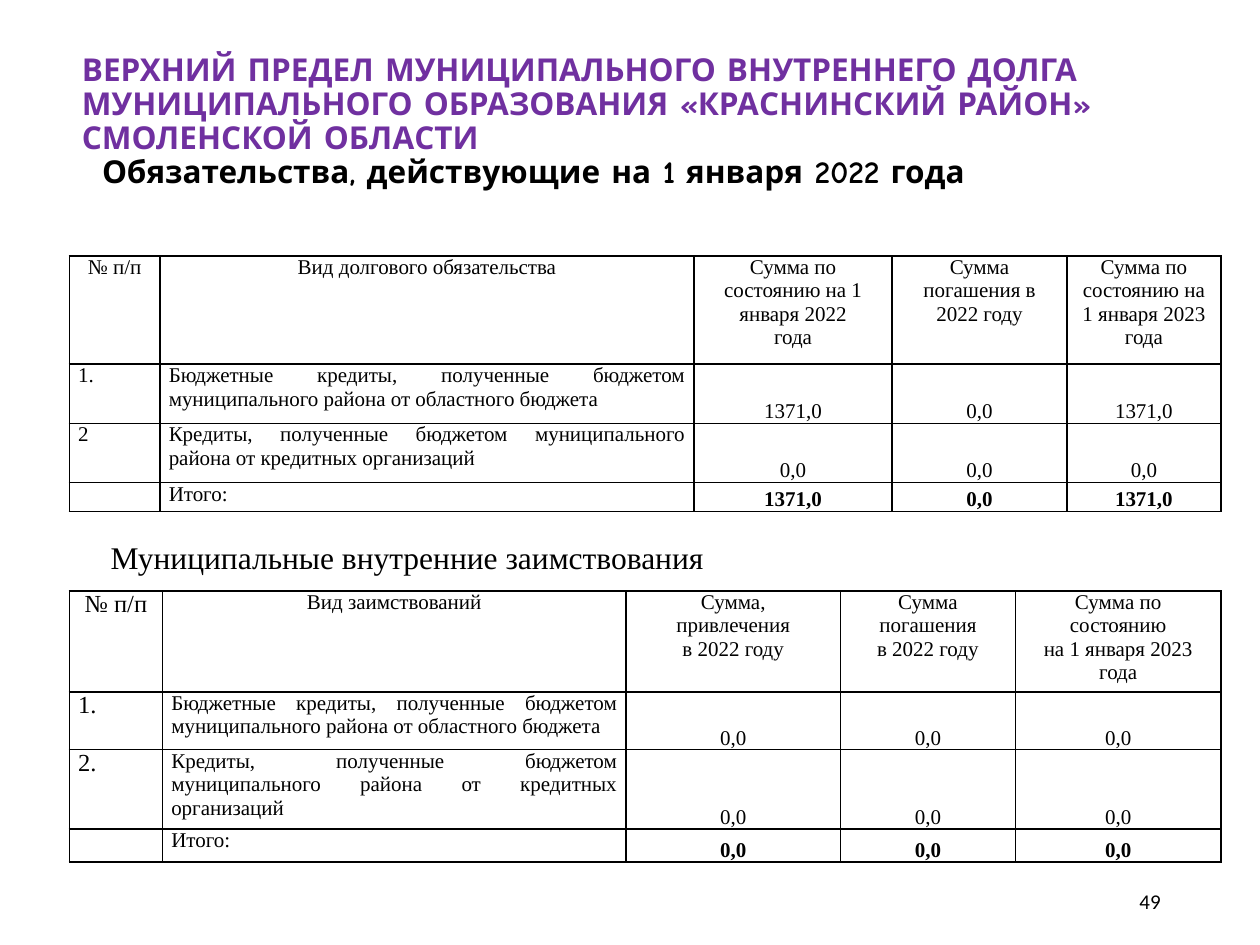
"""Build the slide on municipal debt limits and borrowings."""
from lxml import etree
from pptx import Presentation
from pptx import util as u
from pptx.dml.color import RGBColor
from pptx.enum import text
from pptx.oxml import ns

THEME = {
    "purple": RGBColor.from_string("7030A0"),
    "black": RGBColor.from_string("000000"),
    "line": "000000",
    "display": "Comic Neue",
    "serif": "Times New Roman",
    "sans": "Calibri",
    "heading": 18,
    "number": 14,
    "body": 12,
}

HEADING = ("ВЕРХНИЙ ПРЕДЕЛ МУНИЦИПАЛЬНОГО ВНУТРЕННЕГО ДОЛГА МУНИЦИПАЛЬНОГО "
           "ОБРАЗОВАНИЯ «КРАСНИНСКИЙ РАЙОН» СМОЛЕНСКОЙ ОБЛАСТИ")
SUBHEADING = "Обязательства, действующие на 1 января 2022 года"
BORROWINGS = "Муниципальные внутренние заимствования"
PAGE_NUMBER = "49"
BUDGET_LOANS = ("Бюджетные кредиты, полученные бюджетом муниципального района "
                "от областного бюджета")
BANK_LOANS = ("Кредиты, полученные бюджетом муниципального района "
              "от кредитных организаций")

TABLES = [
    {
        "top": 2.03,
        "columns": [0.72, 4.24, 1.57, 1.39, 1.22],
        "heights": [0.86, 0.47, 0.47, 0.23],
        "number_size": THEME["body"],
        "rows": [
            ["№ п/п", "Вид долгового обязательства",
             "Сумма по состоянию на 1 января 2022\nгода",
             "Сумма погашения в 2022 году",
             "Сумма по состоянию на 1 января 2023 года"],
            ["1.", BUDGET_LOANS, "1371,0", "0,0", "1371,0"],
            ["2", BANK_LOANS, "0,0", "0,0", "0,0"],
            ["", "Итого:", "1371,0", "0,0", "1371,0"],
        ],
    },
    {
        "top": 4.69,
        "columns": [0.74, 3.68, 1.7, 1.39, 1.63],
        "heights": [0.8, 0.46, 0.63, 0.26],
        "number_size": THEME["number"],
        "rows": [
            ["№ п/п", "Вид заимствований",
             "Сумма,\nпривлечения\nв 2022 году",
             "Сумма погашения\nв 2022 году",
             "Сумма по состоянию\nна 1 января 2023 года"],
            ["1.", BUDGET_LOANS, "0,0", "0,0", "0,0"],
            ["2.", BANK_LOANS, "0,0", "0,0", "0,0"],
            ["", "Итого:", "0,0", "0,0", "0,0"],
        ],
    },
]


def style(para, font, size, color=THEME["black"], bold=False):
    for span in para.runs:
        span.font.name = font
        span.font.size = u.Pt(size)
        span.font.color.rgb = color
        span.font.bold = bold


def place(shape, left, top, width, height):
    shape.left, shape.top = u.Inches(left), u.Inches(top)
    shape.width, shape.height = u.Inches(width), u.Inches(height)


def add_title(page):
    title = page.shapes.title
    place(title, 0.55, 0.23, 9.06, 1.48)
    frame = title.text_frame
    frame.text = f"{HEADING}\n{SUBHEADING}"
    frame.auto_size = text.MSO_AUTO_SIZE.NONE
    frame.vertical_anchor = text.MSO_ANCHOR.MIDDLE
    for para, color in zip(frame.paragraphs, (THEME["purple"], THEME["black"])):
        para.alignment = text.PP_ALIGN.LEFT
        para.line_spacing = 0.9
        style(para, THEME["display"], THEME["heading"], color, True)
    frame.paragraphs[1]._p.get_or_add_pPr().set("marL", str(u.Inches(0.16)))


def add_label(page, words, area, font, size, align):
    box = page.shapes.add_textbox(*map(u.Inches, area))
    frame = box.text_frame
    frame.word_wrap = True
    frame.vertical_anchor = text.MSO_ANCHOR.MIDDLE
    frame.text = words
    para = frame.paragraphs[0]
    para.alignment = align
    style(para, font, size)


def draw_borders(cell):
    properties = cell._tc.get_or_add_tcPr()
    for index, side in enumerate(("lnL", "lnR", "lnT", "lnB")):
        line = etree.Element(ns.qn(f"a:{side}"), w=str(u.Pt(1)))
        fill = etree.SubElement(line, ns.qn("a:solidFill"))
        etree.SubElement(fill, ns.qn("a:srgbClr"), val=THEME["line"])
        properties.insert(index, line)


def cell_alignment(row, column, last):
    if row == 0 or column > 1:
        return text.PP_ALIGN.CENTER
    if column == 1 and row < last:
        return text.PP_ALIGN.JUSTIFY
    return text.PP_ALIGN.LEFT


def add_debt_table(page, data):
    rows, columns = data["rows"], data["columns"]
    last = len(rows) - 1
    area = (0.55, data["top"], sum(columns), sum(data["heights"]))
    table = page.shapes.add_table(
        len(rows), len(columns), *map(u.Inches, area)).table
    table.first_row = table.horz_banding = False
    for column, width in zip(table.columns, columns):
        column.width = u.Inches(width)
    for row, height in zip(table.rows, data["heights"]):
        row.height = u.Inches(height)
    for r, values in enumerate(rows):
        for c, value in enumerate(values):
            cell = table.cell(r, c)
            cell.text = value
            cell.fill.background()
            draw_borders(cell)
            cell.margin_left = cell.margin_right = u.Inches(0.07)
            cell.margin_top = cell.margin_bottom = 0
            is_amount = r > 0 and c > 1
            cell.vertical_anchor = (text.MSO_ANCHOR.BOTTOM if is_amount
                                    else text.MSO_ANCHOR.TOP)
            size = data["number_size"] if c == 0 else THEME["body"]
            for para in cell.text_frame.paragraphs:
                para.alignment = cell_alignment(r, c, last)
                style(para, THEME["serif"], size, bold=is_amount and r == last)
                if not value:
                    end = para._p.get_or_add_endParaRPr()
                    end.set("sz", str(THEME["body"] * 100))


def main():
    deck = Presentation()
    deck.slide_width, deck.slide_height = u.Inches(10), u.Inches(7.5)
    page = deck.slides.add_slide(deck.slide_layouts[5])
    add_title(page)
    add_label(page, PAGE_NUMBER, (7.06, 6.95, 2.25, 0.4),
              THEME["sans"], THEME["body"], text.PP_ALIGN.RIGHT)
    add_label(page, BORROWINGS, (0.78, 4.22, 9.22, 0.4),
              THEME["serif"], THEME["heading"], text.PP_ALIGN.LEFT)
    for data in TABLES:
        add_debt_table(page, data)
    deck.save("out.pptx")


if __name__ == "__main__":
    main()
